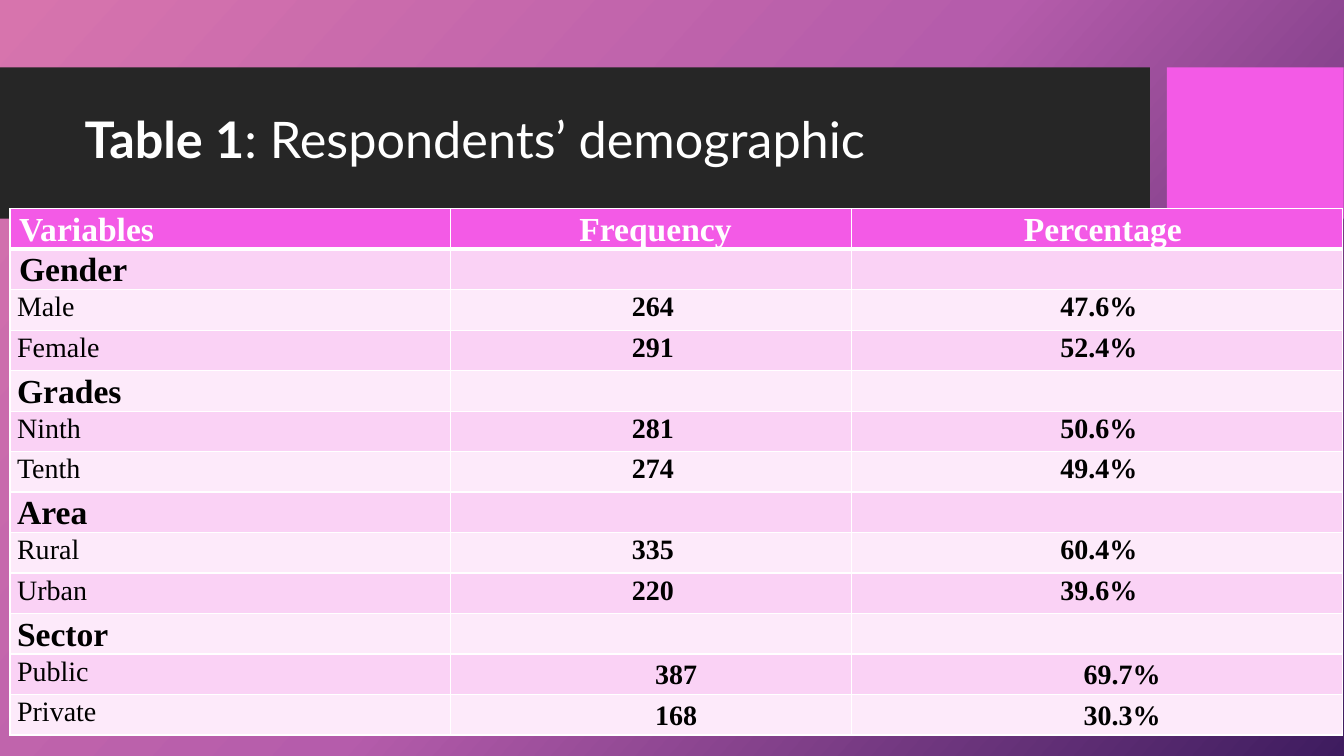
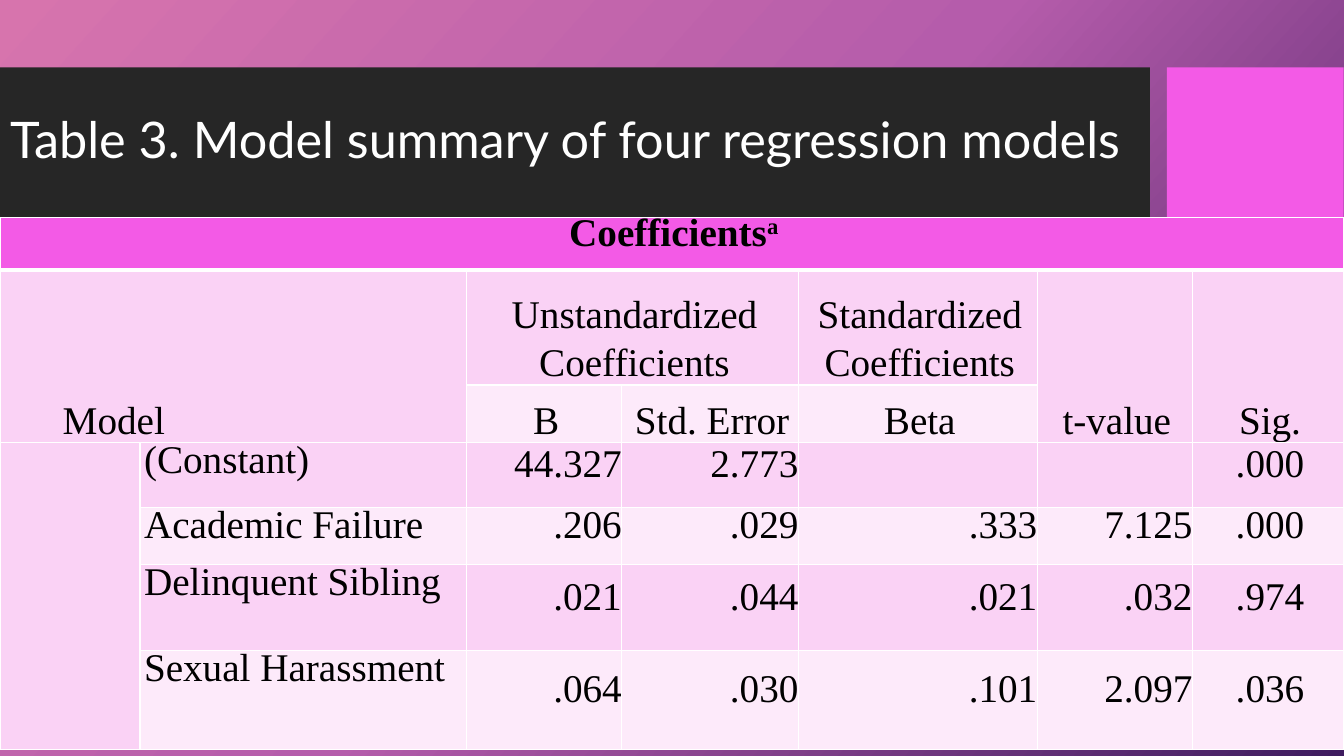
from copy import deepcopy

from lxml import etree
from pptx import Presentation
from pptx import util as u
from pptx.dml.color import RGBColor
from pptx.enum import shapes, text
from pptx.oxml.ns import qn

COLORS = {
    "sky": "D774AD", "dusk": "B55CAB", "night": "3E1C5F",
    "band": "262626", "accent": "F35AE6", "odd": "FAD2F5", "even": "FDEAFA",
    "white": "FFFFFF", "black": "000000",
}
ALIGN = text.PP_ALIGN
ANCHOR = text.MSO_ANCHOR


def look(size, color="black", bold=False, align=ALIGN.LEFT, spacing=1.07,
         anchor=ANCHOR.TOP, indent=0.1, face="Times New Roman"):
    return {
        "font": {"name": face, "size": u.Pt(size), "bold": bold},
        "paragraph": {"alignment": align, "line_spacing": spacing},
        "frame": {"vertical_anchor": anchor},
        "color": color,
        "indent": indent,
    }


TIGHT = u.Pt(16)
LOOKS = {
    "title": look(36, "white", spacing=0.9, anchor=ANCHOR.MIDDLE, indent=0, face="Lato"),
    "variables": look(24, "white", True, indent=0.05),
    "frequency": look(24, "white", True, ALIGN.CENTER, indent=0.23),
    "percentage": look(24, "white", True, ALIGN.CENTER, indent=0.3),
    "first group": look(24, bold=True, indent=0.05),
    "group": look(24, bold=True, indent=0),
    "category": look(20, indent=0),
    "count": look(20, bold=True, align=ALIGN.CENTER),
    "sector count": look(20, bold=True, align=ALIGN.CENTER, anchor=ANCHOR.MIDDLE, indent=1.27),
    "caption": look(28, bold=True, align=ALIGN.CENTER, spacing=TIGHT, anchor=ANCHOR.MIDDLE),
    "model": look(28, spacing=1.1, anchor=ANCHOR.BOTTOM, indent=1.58),
    "family": look(28, align=ALIGN.CENTER, spacing=1.1, anchor=ANCHOR.BOTTOM),
    "measure": look(28, align=ALIGN.CENTER, spacing=TIGHT, anchor=ANCHOR.BOTTOM),
    "predictor": look(28, spacing=0.9),
    "estimate": look(28, align=ALIGN.RIGHT, spacing=TIGHT, anchor=ANCHOR.MIDDLE),
    "significance": look(28, align=ALIGN.CENTER, spacing=TIGHT, anchor=ANCHOR.MIDDLE),
}


def rgb(name):
    return RGBColor.from_string(COLORS[name])


def apply(target, values):
    for key, value in values.items():
        setattr(target, key, value)


class Deck:
    def __init__(self):
        self.prs = Presentation()
        apply(self.prs, {"slide_width": u.Cm(33.87), "slide_height": u.Cm(19.05)})
        self.slide = None
        self.backdrop()

    def backdrop(self):
        fill = self.prs.slide_master.background.fill
        fill.gradient()
        fill.gradient_angle = 360 - 42
        last = fill.gradient_stops[1]._gs
        last.addprevious(deepcopy(last))
        for stop, name, position in zip(fill.gradient_stops, ("sky", "dusk", "night"), (0, 0.5, 1)):
            stop.color.rgb = rgb(name)
            stop.position = position

    def new_slide(self, runs, left, width):
        self.slide = self.prs.slides.add_slide(self.prs.slide_layouts[5])
        self.band("accent", 29.41, 4.45)
        self.band("band", 0, 28.98)
        title = self.slide.shapes.title
        apply(title, {"left": u.Cm(left), "top": u.Cm(2.08),
                      "width": u.Cm(width), "height": u.Cm(3)})
        apply(title.text_frame, {"word_wrap": True, "auto_size": text.MSO_AUTO_SIZE.NONE})
        self.put_text(title.text_frame, title.text_frame, runs, "title")

    def band(self, color, left, width):
        block = self.slide.shapes.add_shape(
            shapes.MSO_SHAPE.RECTANGLE, u.Cm(left), u.Cm(1.7), u.Cm(width), u.Cm(3.81))
        block.shadow.inherit = False
        block.fill.solid()
        block.fill.fore_color.rgb = rgb(color)
        block.line.fill.background()
        self.slide.shapes._spTree.insert(2, block._element)

    def put_text(self, holder, frame, runs, name):
        style = LOOKS[name]
        apply(holder, style["frame"])
        paragraph = frame.paragraphs[0]
        apply(paragraph, style["paragraph"])
        properties = paragraph._p.get_or_add_pPr()
        properties.set("marL", str(u.Cm(style["indent"])))
        properties.set("indent", "0")
        for words, extra in [(runs, {})] if isinstance(runs, str) else runs:
            run = paragraph.add_run()
            run.text = words
            apply(run.font, style["font"])
            run.font.color.rgb = rgb(style["color"])
            for key, value in extra.items():
                run._r.get_or_add_rPr().set(key, value)

    def borders(self, cell, heading):
        properties = cell._tc.get_or_add_tcPr()
        for side in ("lnL", "lnR", "lnT", "lnB"):
            weight = 3 if heading and side == "lnB" else 1
            line = etree.SubElement(properties, qn("a:" + side), w=str(u.Pt(weight)))
            solid = etree.SubElement(line, qn("a:solidFill"))
            etree.SubElement(solid, qn("a:srgbClr"), val=COLORS["white"])

    def table(self, left, top, widths, heights, rows, margin=0, merges=()):
        grid = self.slide.shapes.add_table(
            len(rows), len(widths), u.Cm(left), u.Cm(top),
            u.Cm(sum(widths)), u.Cm(sum(heights))).table
        apply(grid, {"first_row": False, "horz_banding": False})
        for column, width in zip(grid.columns, widths):
            column.width = u.Cm(width)
        for r, (row, height) in enumerate(zip(rows, heights)):
            grid.rows[r].height = u.Cm(height)
            shade = "accent" if r == 0 else "odd" if r % 2 else "even"
            for c, content in enumerate(row):
                cell = grid.cell(r, c)
                apply(cell, {"margin_left": u.Cm(margin), "margin_right": u.Cm(margin),
                             "margin_top": 0, "margin_bottom": 0})
                self.borders(cell, r == 0)
                cell.fill.solid()
                cell.fill.fore_color.rgb = rgb(shade)
                if content:
                    self.put_text(cell, cell.text_frame, *content)
        for first, last in merges:
            grid.cell(*first).merge(grid.cell(*last))


def demographics(deck):
    deck.new_slide([("Table 1", {"b": "1"}), (": Respondents’ demographic", {})], 1.88, 26.7)
    groups = {
        "Gender": [("Male", "264", "47.6%"), ("Female", "291", "52.4%")],
        "Grades": [("Ninth", "281", "50.6%"), ("Tenth", "274", "49.4%")],
        "Area": [("Rural", "335", "60.4%"), ("Urban", "220", "39.6%")],
        "Sector": [("Public", "387", "69.7%"), ("Private", "168", "30.3%")],
    }
    rows = [[(label, label.lower()) for label in ("Variables", "Frequency", "Percentage")]]
    for group, categories in groups.items():
        rows.append([(group, "first group" if group == "Gender" else "group"), None, None])
        count = "sector count" if group == "Sector" else "count"
        for category, frequency, percentage in categories:
            rows.append([(category, "category"), (frequency, count), (percentage, count)])
    deck.table(0.25, 5.26, [11.1, 10.11, 12.37], [1.02] * len(rows), rows, margin=0.18)


def regression(deck):
    deck.new_slide("Table 3. Model summary of four regression models", 0, 29.18)
    predictors = [
        ("(Constant)", "44.327", "2.773", "", "", ".000"),
        ("Academic Failure", ".206", ".029", ".333", "7.125", ".000"),
        ("Delinquent Sibling", ".021", ".044", ".021", ".032", ".974"),
        ("Sexual Harassment", ".064", ".030", ".101", "2.097", ".036"),
    ]
    caption = [("Coefficients", {}), ("a", {"baseline": "30000"})]
    rows = [
        [(caption, "caption")] + [None] * 6,
        [("Model", "model"), None, ("Unstandardized Coefficients", "family"), None,
         ("Standardized Coefficients", "family"), ("t-value", "measure"), ("Sig.", "measure")],
        [None, None, ("B", "measure"), ("Std. Error", "measure"), ("Beta", "measure"), None, None],
    ]
    for predictor, *estimates, significance in predictors:
        rows.append([None, (predictor, "predictor")]
                    + [(value, "estimate") if value else None for value in estimates]
                    + [(significance, "significance")])
    merges = [((0, 0), (0, 6)), ((1, 0), (2, 1)), ((1, 2), (1, 3)),
              ((1, 5), (2, 5)), ((1, 6), (2, 6)), ((3, 0), (6, 0))]
    deck.table(0, 5.48, [3.53, 8.23, 3.91, 4.45, 6.02, 3.91, 3.81],
               [1.32, 2.9, 1.45, 1.63, 1.45, 2.16, 2.49], rows, merges=merges)


def main():
    deck = Deck()
    demographics(deck)
    regression(deck)
    deck.prs.save("out.pptx")


if __name__ == "__main__":
    main()
